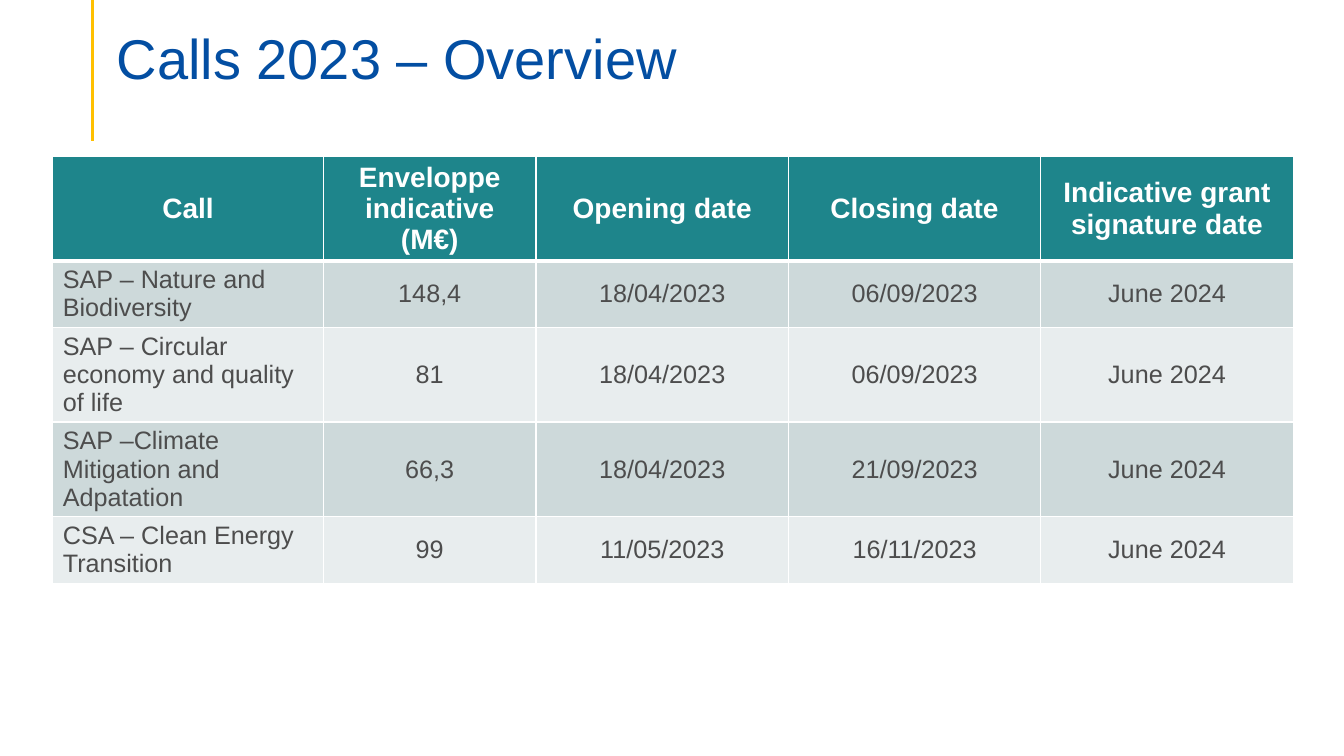
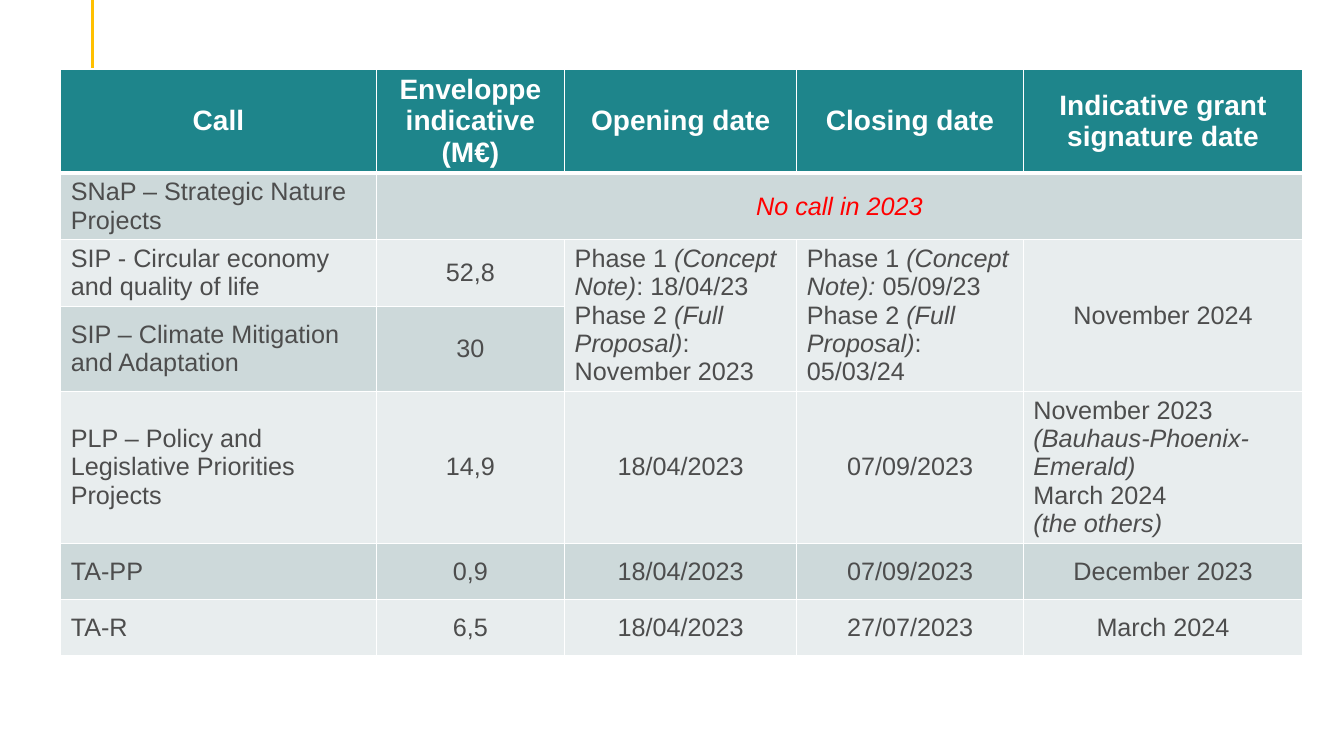
from dataclasses import dataclass

import pptx
import pptx.dml.color
import pptx.enum.shapes
import pptx.enum.text
import pptx.oxml
import pptx.oxml.ns
import pptx.util
from pptx.util import Cm

ALIGN = pptx.enum.text.PP_ALIGN
ANCHOR = pptx.enum.text.MSO_ANCHOR
TITLE_ONLY, BLANK = 5, 6


@dataclass(frozen=True)
class Theme:
    font: str = "Arial"
    title: str = "034EA2"
    rule: str = "FFC000"
    header: str = "1E858B"
    bands: tuple = ("E8EDEE", "CDD9DA")
    text: str = "4D4D4D"
    light: str = "FFFFFF"
    alert: str = "FF0000"
    title_size: int = 40
    header_size: int = 20
    body_size: int = 18
    rule_width: float = 2.25
    border_width: int = 1
    header_border_width: int = 3


def apply(target, values):
    for name, value in values.items():
        setattr(target, name, value)


def rgb(value):
    return pptx.dml.color.RGBColor.from_string(value)


class Deck:
    """Holds the theme, the presentation and the current slide."""

    def __init__(self, theme):
        self.theme = theme
        self.presentation = pptx.Presentation()
        self.slide = None
        apply(self.presentation, {"slide_width": Cm(33.87), "slide_height": Cm(19.05)})

    def add_slide(self, title=None):
        layout = self.presentation.slide_layouts[TITLE_ONLY if title else BLANK]
        self.slide = self.presentation.slides.add_slide(layout)
        self.add_rule()
        if title:
            self.set_title(title)

    def add_rule(self):
        rule = self.slide.shapes.add_connector(
            pptx.enum.shapes.MSO_CONNECTOR.STRAIGHT, Cm(2.34), 0, Cm(2.34), Cm(3.56))
        rule.line.color.rgb = rgb(self.theme.rule)
        rule.line.width = pptx.util.Pt(self.theme.rule_width)
        properties = rule._element.spPr
        properties.append(properties.makeelement(pptx.oxml.ns.qn("a:effectLst"), {}))

    def set_title(self, text):
        shape = self.slide.shapes.title
        apply(shape, {"left": Cm(2.69), "top": Cm(0.13),
                      "width": Cm(29.21), "height": Cm(2.18)})
        frame = shape.text_frame
        apply(frame, {"auto_size": pptx.enum.text.MSO_AUTO_SIZE.NONE,
                      "vertical_anchor": ANCHOR.BOTTOM, "margin_bottom": 0})
        paragraph = frame.paragraphs[0]
        apply(paragraph, {"alignment": ALIGN.LEFT, "line_spacing": 0.9})
        self.add_run(paragraph, text, self.theme.title_size, self.theme.title)

    def add_run(self, paragraph, text, size, color, **styles):
        run = paragraph.add_run()
        run.text = text
        apply(run.font, {"name": self.theme.font, "size": pptx.util.Pt(size), **styles})
        run.font.color.rgb = rgb(color)

    def add_table(self, left, top, widths, heights, rows):
        """Draw a table whose first row is the header; lengths are in cm."""
        frame = self.slide.shapes.add_table(
            len(rows), len(widths), Cm(left), Cm(top), Cm(sum(widths)), Cm(sum(heights)))
        table = frame.table
        table.horz_banding = False
        for column, width in zip(table.columns, widths):
            column.width = Cm(width)
        for row, height in zip(table.rows, heights):
            row.height = Cm(height)
        for row_index, texts in enumerate(rows):
            for column_index, text in enumerate(texts):
                self.fill_cell(table.cell(row_index, column_index), text,
                               row_index, column_index)
        return table

    def fill_cell(self, cell, text, row_index, column_index):
        theme = self.theme
        is_header = row_index == 0
        self.set_borders(cell, row_index)
        cell.fill.solid()
        cell.fill.fore_color.rgb = rgb(theme.header if is_header
                                       else theme.bands[row_index % 2])
        cell.vertical_anchor = ANCHOR.MIDDLE
        if not text:
            return
        lines = text.split("\n")
        is_left = len(lines) > 1 or (column_index == 0 and not is_header)
        size, color = ((theme.header_size, theme.light) if is_header
                       else (theme.body_size, theme.text))
        for index, line in enumerate(lines):
            frame = cell.text_frame
            paragraph = frame.add_paragraph() if index else frame.paragraphs[0]
            paragraph.alignment = ALIGN.LEFT if is_left else ALIGN.CENTER
            # Asterisks enclose the italic parts
            for part_index, part in enumerate(line.split("*")):
                if part:
                    self.add_run(paragraph, part, size, color,
                                 bold=is_header, italic=part_index % 2 == 1)

    def set_borders(self, cell, row_index):
        theme = self.theme
        properties = cell._tc.get_or_add_tcPr()
        for side in "LRTB":
            is_header_edge = (row_index, side) in ((0, "B"), (1, "T"))
            width = theme.header_border_width if is_header_edge else theme.border_width
            properties.append(pptx.oxml.parse_xml(
                f'<a:ln{side} {pptx.oxml.ns.nsdecls("a")} w="{pptx.util.Pt(width)}">'
                f'<a:solidFill><a:srgbClr val="{theme.light}"/></a:solidFill>'
                f'</a:ln{side}>'))

    def highlight(self, cell):
        for run in cell.text_frame.paragraphs[0].runs:
            run.font.color.rgb = rgb(self.theme.alert)


HEADERS = ("Call", "Enveloppe indicative (M€)", "Opening date", "Closing date",
           "Indicative grant signature date")


def build_overview(deck):
    deck.add_slide("Calls 2023 – Overview")
    calls = (
        ("SAP – Nature and Biodiversity", "148,4", "18/04/2023", "06/09/2023"),
        ("SAP – Circular economy and quality of life", "81", "18/04/2023", "06/09/2023"),
        ("SAP –Climate Mitigation and Adpatation", "66,3", "18/04/2023", "21/09/2023"),
        ("CSA – Clean Energy Transition", "99", "11/05/2023", "16/11/2023"),
    )
    rows = [HEADERS] + [(*call, "June 2024") for call in calls]
    deck.add_table(1.33, 3.95, (6.82, 5.36, 6.36, 6.36, 6.36),
                   (2.62, 1.67, 2.38, 2.38, 1.67), rows)


def build_other_calls(deck):
    deck.add_slide()
    rows = (
        HEADERS,
        ("SNaP – Strategic Nature Projects", "*No call in 2023*", "", "", ""),
        ("SIP - Circular economy and quality of life", "52,8",
         "Phase 1 *(Concept Note)*: 18/04/23\nPhase 2 *(Full Proposal)*: November 2023",
         "Phase 1 *(Concept Note): *05/09/23\nPhase 2 *(Full Proposal)*: 05/03/24",
         "November 2024"),
        ("SIP – Climate Mitigation and Adaptation", "30", "", "", ""),
        ("PLP – Policy and Legislative Priorities Projects", "14,9",
         "18/04/2023", "07/09/2023",
         "November 2023 *(Bauhaus-Phoenix-Emerald)*\nMarch 2024\n*(the others)*"),
        ("TA-PP", "0,9", "18/04/2023", "07/09/2023", "December 2023"),
        ("TA-R", "6,5", "18/04/2023", "27/07/2023", "March 2024"),
    )
    table = deck.add_table(1.53, 1.74, (7.95, 4.75, 5.85, 5.71, 7.04),
                           (2.62, 1.67, 1.69, 2.13, 3.83, 1.42, 1.42), rows)
    # One notice across the row, shared dates across both SIP rows
    deck.highlight(table.cell(1, 1))
    table.cell(1, 1).merge(table.cell(1, 4))
    for column_index in (2, 3, 4):
        table.cell(2, column_index).merge(table.cell(3, column_index))


def main():
    deck = Deck(Theme())
    build_overview(deck)
    build_other_calls(deck)
    deck.presentation.save("out.pptx")


if __name__ == "__main__":
    main()
